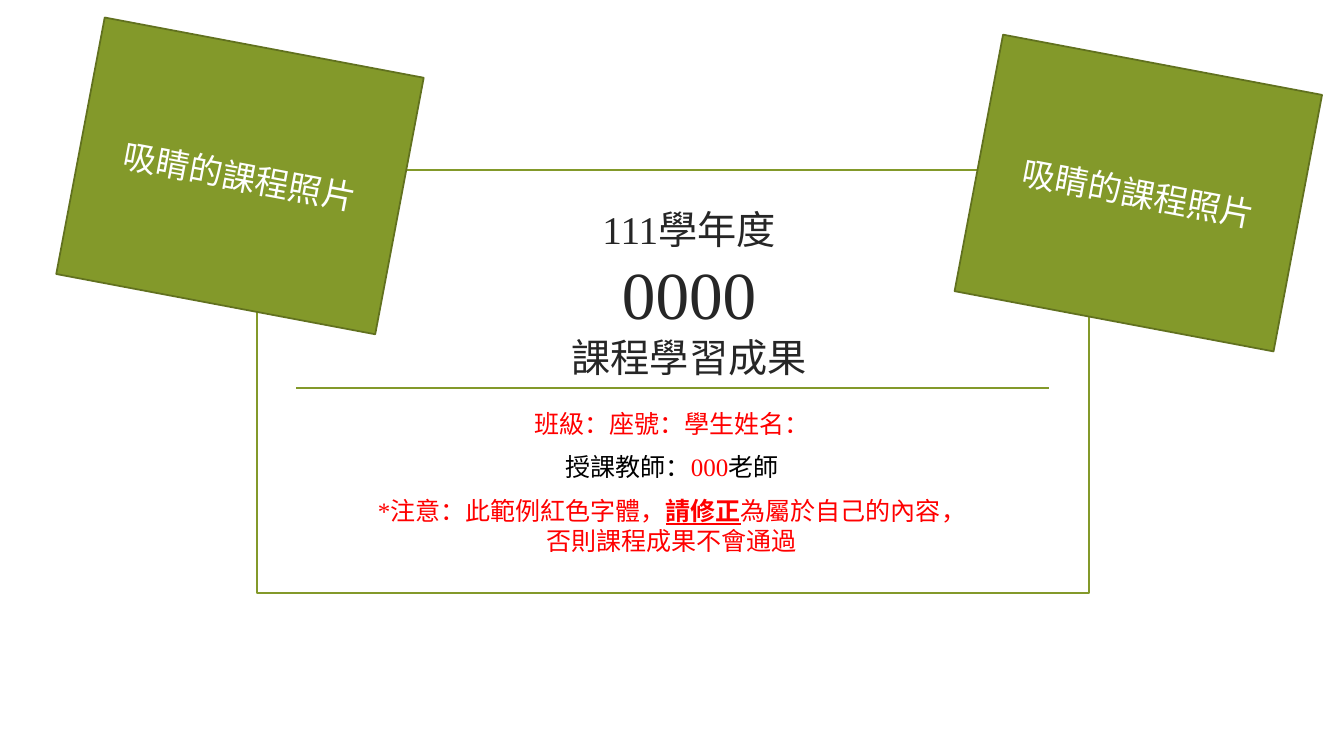
from pptx import Presentation
from pptx.dml.color import RGBColor
from pptx.enum.shapes import MSO_CONNECTOR, MSO_SHAPE
from pptx.enum.text import MSO_ANCHOR, MSO_AUTO_SIZE, PP_ALIGN
from pptx.oxml.ns import qn
from pptx.util import Inches, Pt
from lxml import etree

RECT = MSO_SHAPE.RECTANGLE
STRAIGHT = MSO_CONNECTOR.STRAIGHT
TOP, MIDDLE, BOTTOM = MSO_ANCHOR.TOP, MSO_ANCHOR.MIDDLE, MSO_ANCHOR.BOTTOM
CENTER = PP_ALIGN.CENTER
NO_FIT = MSO_AUTO_SIZE.NONE

FONT = "Times New Roman"
COLORS = {
    "green": "83992A",
    "olive": "61711F",
    "ink": "262626",
    "red": "FF0000",
    "black": "000000",
    "white": "FFFFFF",
}
TITLE = [[
    ("111學年度\n", "ink", {"size": Pt(28)}),
    ("0000\n", "ink", {"size": Pt(48)}),
    ("課程學習成果", "ink", {"size": Pt(28)}),
]]
DETAIL = {"size": Pt(17.9)}
DETAILS = [
    [("班級：座號：學生姓名：", "red", DETAIL)],
    [("授課教師：", "black", DETAIL), ("000", "red", DETAIL), ("老師", "black", DETAIL)],
    [
        ("*注意：此範例紅色字體，", "red", DETAIL),
        ("請修正", "red", {**DETAIL, "bold": True, "underline": True}),
        ("為屬於自己的內容，\n否則課程成果不會通過", "red", DETAIL),
    ],
]
PHOTO = [[("吸睛的課程照片", "white", {"size": Pt(24)})]]


def rgb(name):
    return RGBColor.from_string(COLORS[name])


def set_line(line, color):
    line.color.rgb = rgb(color)
    line.width = Pt(1.25)


def place(sp, left, top, width, height):
    sp.left, sp.top = Inches(left), Inches(top)
    sp.width, sp.height = Inches(width), Inches(height)


def add_run(p, text, color, fmt):
    for i, part in enumerate(text.split("\n")):
        if i:
            p.add_line_break()
        if part:
            r = p.add_run()
            r.text = part
            r.font.color.rgb = rgb(color)
            for key, value in {"name": FONT, **fmt}.items():
                setattr(r.font, key, value)


def write(sp, paragraphs, anchor, before=0, after=0):
    tf = sp.text_frame
    for key, value in {"word_wrap": True, "auto_size": NO_FIT, "vertical_anchor": anchor}.items():
        setattr(tf, key, value)
    for i, runs in enumerate(paragraphs):
        p = tf.add_paragraph() if i else tf.paragraphs[0]
        fmt = {
            "alignment": CENTER,
            "space_before": Pt(before if i else 0),
            "space_after": Pt(after),
        }
        for key, value in fmt.items():
            setattr(p, key, value)
        for text, color, font in runs:
            add_run(p, text, color, font)


def add_rect(s, box, line, fill=None):
    sp = s.shapes.add_shape(RECT, *map(Inches, box))
    sp.shadow.inherit = False
    if fill:
        sp.fill.solid()
        sp.fill.fore_color.rgb = rgb(fill)
    else:
        sp.fill.background()
    set_line(sp.line, line)
    return sp


def add_divider(s, left, right, y):
    cx = s.shapes.add_connector(STRAIGHT, Inches(left), Inches(y), Inches(right), Inches(y))
    set_line(cx.line, "green")
    etree.SubElement(cx._element.spPr, qn("a:effectLst"))


def add_photo(s, left, top):
    sp = add_rect(s, (left, top, 3.22, 2.59), "olive", "green")
    sp.rotation = 10.7
    write(sp, PHOTO, MIDDLE)


def main():
    prs = Presentation()
    prs.slide_width, prs.slide_height = Inches(13.33), Inches(7.5)
    s = prs.slides.add_slide(prs.slide_layouts[5])

    add_rect(s, (2.55, 1.69, 8.25, 4.19), "green")
    add_divider(s, 2.94, 10.4, 3.85)

    title = s.shapes.title
    place(title, 3.11, 1.74, 7.45, 2.08)
    write(title, TITLE, BOTTOM)

    details = s.shapes.add_textbox(Inches(2.94), Inches(4), Inches(7.45), Inches(1.44))
    write(details, DETAILS, TOP, before=3.6, after=6)

    for left, top in ((0.77, 0.45), (9.68, 0.62)):
        add_photo(s, left, top)

    prs.save("out.pptx")


if __name__ == "__main__":
    main()
